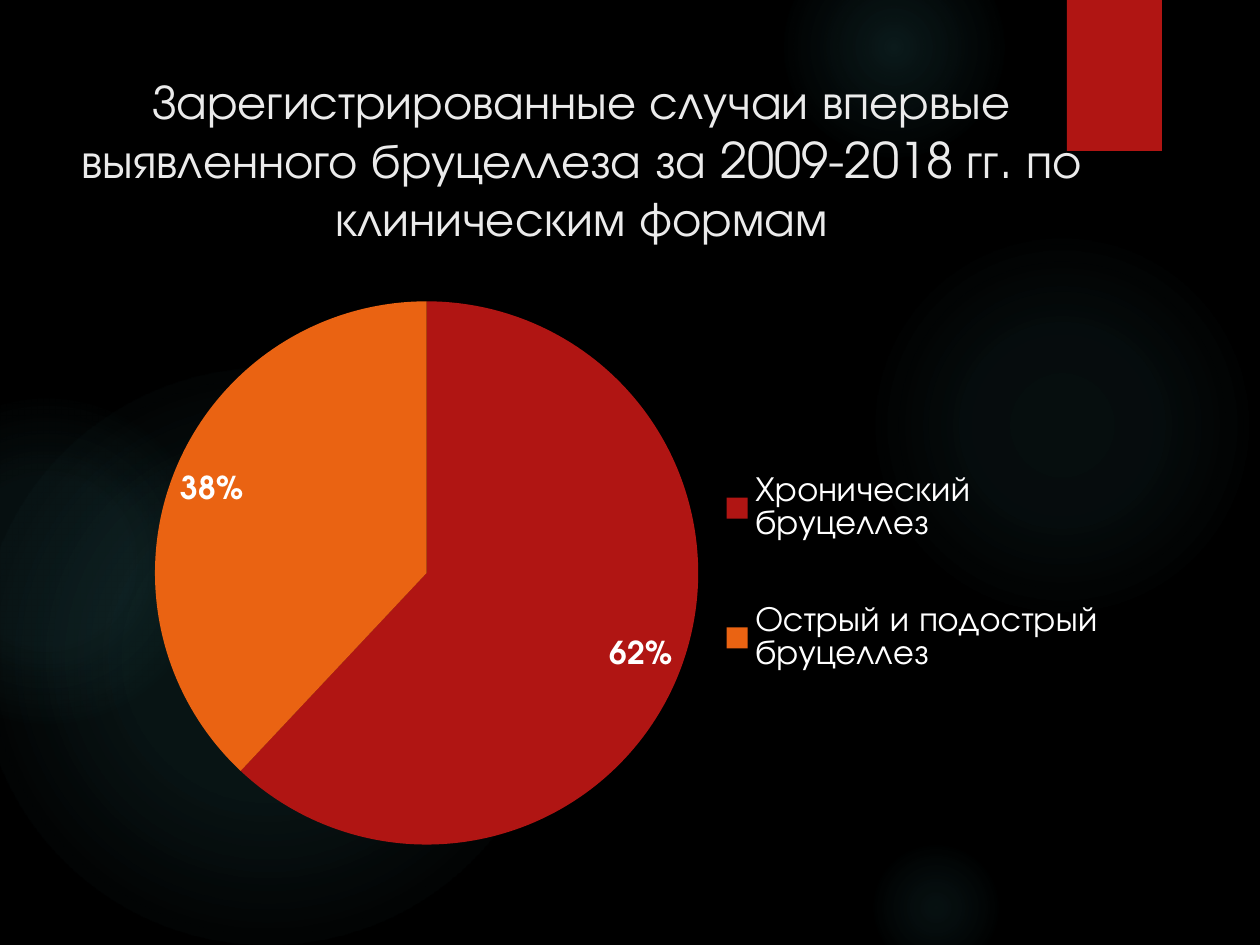
from typing import NamedTuple

from lxml import etree
from pptx import Presentation
from pptx.chart.data import CategoryChartData
from pptx.dml.color import RGBColor
from pptx.enum.chart import XL_CHART_TYPE, XL_LABEL_POSITION, XL_LEGEND_POSITION
from pptx.enum.shapes import MSO_SHAPE
from pptx.enum.text import MSO_ANCHOR, PP_ALIGN
from pptx.oxml import parse_xml
from pptx.oxml.ns import nsdecls, qn
from pptx.util import Emu, Pt

OVAL, RECT = MSO_SHAPE.OVAL, MSO_SHAPE.RECTANGLE
PIE = XL_CHART_TYPE.PIE
INSIDE = XL_LABEL_POSITION.INSIDE_END
RIGHT = XL_LEGEND_POSITION.RIGHT
MIDDLE, CENTER = MSO_ANCHOR.MIDDLE, PP_ALIGN.CENTER

FONT = "TeX Gyre Adventor"
RED, ORANGE, WHITE = "B01513", "EA6312", "FFFFFF"
GLOW = "50B9C1"
SCALE = 914400 / 126


class Glow(NamedTuple):
    x: int
    y: int
    size: int
    stops: tuple[tuple[int, int], ...]


class Slice(NamedTuple):
    name: str
    share: float
    color: str


GLOWS = [
    Glow(868, 231, 388, ((0, 7), (36, 6), (69, 0))),
    Glow(784, -63, 220, ((0, 14), (36, 7), (73, 0))),
    Glow(868, 840, 136, ((0, 9), (36, 5), (66, 0))),
    Glow(-21, 368, 577, ((0, 11), (36, 10), (75, 0))),
    Glow(-116, 399, 325, ((0, 8), (36, 8), (72, 0))),
]
SLICES = [
    Slice("Хронический бруцеллез", 0.62, RED),
    Slice("Острый и подострый бруцеллез", 0.38, ORANGE),
]


def px(n: int) -> Emu:
    return Emu(round(n * SCALE))


def rgb(code: str) -> RGBColor:
    return RGBColor.from_string(code)


def box(x: int, y: int, w: int, h: int) -> tuple[Emu, ...]:
    return px(x), px(y), px(w), px(h)


def style(font, size: int, color: str, bold: bool = False) -> None:
    font.name = FONT
    font.size = Pt(size)
    font.bold = bold
    font.color.rgb = rgb(color)


def draw_glow(slide, glow: Glow) -> None:
    shape = slide.shapes.add_shape(OVAL, *box(glow.x, glow.y, glow.size, glow.size))
    shape.shadow.inherit = False
    shape.line.fill.background()
    stops = "".join(
        f'<a:gs pos="{pos * 1000}"><a:srgbClr val="{GLOW}">'
        f'<a:alpha val="{alpha * 1000}"/></a:srgbClr></a:gs>'
        for pos, alpha in glow.stops
    )
    fill = parse_xml(
        f'<a:gradFill {nsdecls("a")}><a:gsLst>{stops}</a:gsLst><a:path path="circle">'
        '<a:fillToRect l="50000" t="50000" r="50000" b="50000"/></a:path></a:gradFill>'
    )
    shape.element.spPr.find(qn("a:prstGeom")).addnext(fill)


def draw_tab(slide) -> None:
    tab = slide.shapes.add_shape(RECT, *box(1067, 0, 95, 151))
    tab.fill.solid()
    tab.fill.fore_color.rgb = rgb(RED)
    tab.line.fill.background()
    tab.shadow.inherit = False
    effects = tab.element.spPr.find(qn("a:effectLst"))
    effects.append(parse_xml(
        f'<a:outerShdw {nsdecls("a")} blurRad="{Pt(3)}" dist="{Pt(2)}" dir="5400000">'
        '<a:srgbClr val="000000"><a:alpha val="45000"/></a:srgbClr></a:outerShdw>'
    ))


def draw_title(slide, text: str) -> None:
    frame = slide.shapes.add_textbox(*box(67, 62, 1029, 193)).text_frame
    frame.word_wrap = True
    frame.vertical_anchor = MIDDLE
    para = frame.paragraphs[0]
    para.alignment = CENTER
    run = para.add_run()
    run.text = text
    style(run.font, 28, "EBEBEB")


def place(part, x: float, y: float, w: float, h: float, inner: bool = False) -> None:
    layout = part.get_or_add_layout() if hasattr(part, "get_or_add_layout") else part.find(qn("c:layout"))
    if layout is None:
        layout = etree.Element(qn("c:layout"))
        part.insert(0, layout)
    for child in list(layout):
        layout.remove(child)
    manual = etree.SubElement(layout, qn("c:manualLayout"))
    target = [("layoutTarget", "inner")] if inner else []
    modes = [("xMode", "edge"), ("yMode", "edge")]
    for tag, val in target + modes + [("x", x), ("y", y), ("w", w), ("h", h)]:
        etree.SubElement(manual, qn(f"c:{tag}")).set("val", str(val))


def draw_pie(slide, slices: list[Slice]) -> None:
    data = CategoryChartData(number_format="0%")
    data.categories = [part.name for part in slices]
    data.add_series("Series 1", [part.share for part in slices])
    chart = slide.shapes.add_chart(PIE, *box(123, 284, 1012, 578), data).chart
    style(chart.font, 10, WHITE)
    chart.has_title = False
    chart.has_legend = True
    legend = chart.legend
    legend.position = RIGHT
    legend.include_in_layout = False
    style(legend.font, 20, WHITE)

    plot = chart.plots[0]
    plot.vary_by_categories = True
    series = plot.series[0]
    for i, part in enumerate(slices):
        point = series.points[i].format
        point.fill.solid()
        point.fill.fore_color.rgb = rgb(part.color)
        point.line.fill.background()
    labels = series.data_labels
    labels.show_value = True
    labels.show_percentage = False
    labels.number_format = "0%"
    labels.number_format_is_linked = False
    labels.position = INSIDE
    style(labels.font, 18, WHITE, True)

    area = chart.element.find(f".//{qn('c:plotArea')}")
    place(area, 0.03, 0.03, 0.54, 0.94, True)
    key = chart.element.find(f".//{qn('c:legend')}")
    layout = key.find(qn("c:layout"))
    if layout is None:
        layout = etree.Element(qn("c:layout"))
        key.find(qn("c:legendPos")).addnext(layout)
    place(key, 0.58, 0.22, 0.4, 0.56)


def main() -> None:
    deck = Presentation()
    deck.slide_width, deck.slide_height = px(1260), px(945)
    slide = deck.slides.add_slide(deck.slide_layouts[6])
    back = slide.background.fill
    back.solid()
    back.fore_color.rgb = rgb("000000")
    for glow in GLOWS:
        draw_glow(slide, glow)
    draw_tab(slide)
    draw_title(
        slide,
        "Зарегистрированные случаи впервые выявленного бруцеллеза "
        "за 2009-2018 гг. по клиническим формам",
    )
    draw_pie(slide, SLICES)
    deck.save("out.pptx")


if __name__ == "__main__":
    main()
